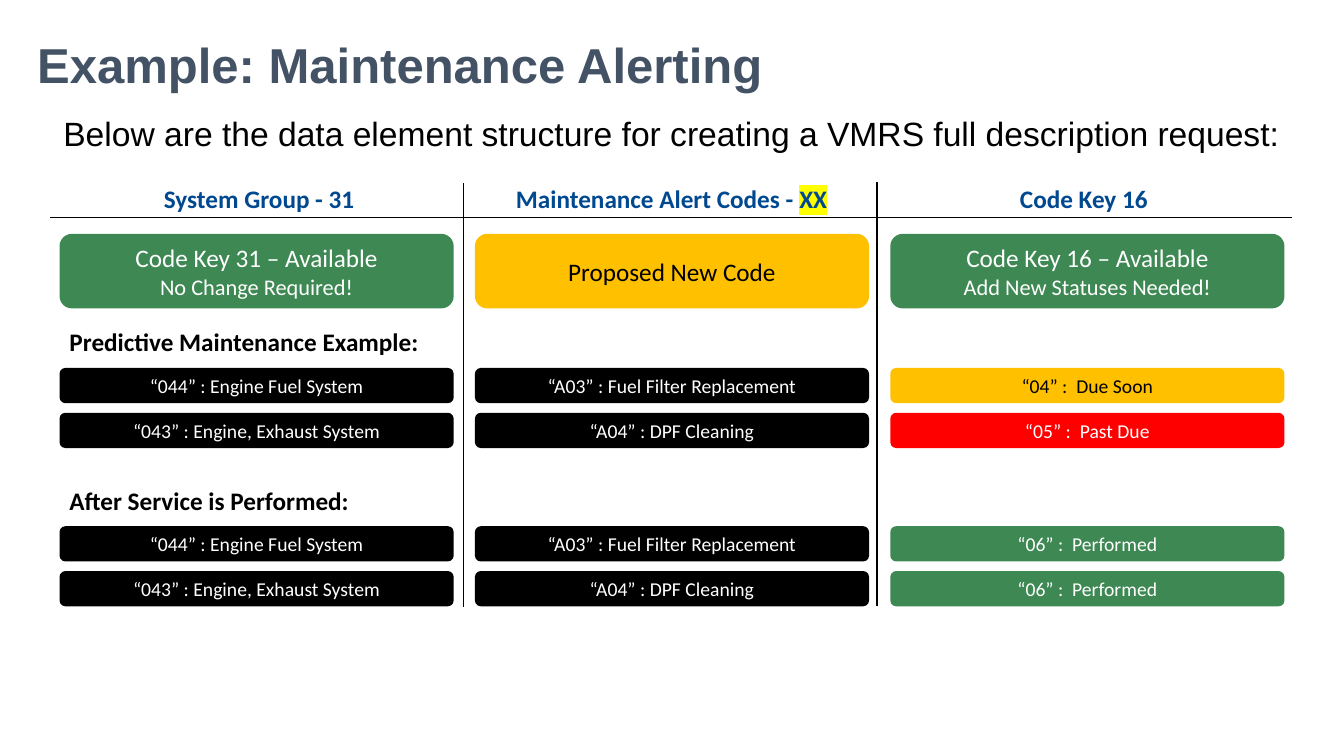
from dataclasses import dataclass
from typing import Any

import lxml.etree
import pptx
import pptx.dml.color
import pptx.enum.shapes
import pptx.enum.text
import pptx.oxml.ns
import pptx.util

COLORS = {
    "title": "435265",
    "header": "004990",
    "black": "000000",
    "white": "FFFFFF",
    "green": "3E8853",
    "amber": "FFC000",
    "red": "FF0000",
    "highlight": "FFFF00",
}

SLIDE_WIDTH, SLIDE_HEIGHT = 13.33, 7.5
GRID_LEFT, COLUMN_PITCH, COLUMN_WIDTH = 0.59, 4.12, 3.91
GRID_WIDTH = 2 * COLUMN_PITCH + COLUMN_WIDTH
HEADER_LEFT, HEADER_PITCH, HEADER_WIDTH = 0.53, 4.09, 4.08
SECTION_TOP, SECTION_PITCH = 3.25, 1.57
FIRST_ROW_OFFSET, ROW_PITCH, ROW_HEIGHT = 0.4, 0.445, 0.35

CENTER = pptx.enum.text.PP_ALIGN.CENTER
LEFT = pptx.enum.text.PP_ALIGN.LEFT
MIDDLE = pptx.enum.text.MSO_ANCHOR.MIDDLE
TOP = pptx.enum.text.MSO_ANCHOR.TOP


@dataclass(frozen=True)
class Box:
    left: float
    top: float
    width: float
    height: float

    def lengths(self) -> list[int]:
        return [pptx.util.Inches(value) for value in (self.left, self.top, self.width, self.height)]


@dataclass(frozen=True)
class Run:
    text: str
    size: float
    color: str
    bold: bool = False
    font: str = "Calibri"
    highlight: str = ""


@dataclass(frozen=True)
class Card:
    lines: tuple[tuple[str, float], ...]
    fill: str
    color: str = "white"


@dataclass(frozen=True)
class Section:
    heading: str
    rows: tuple[tuple[Card, ...], ...]


@dataclass(frozen=True)
class Rule:
    start: tuple[float, float]
    end: tuple[float, float]


def item(text: str, fill: str = "black", color: str = "white") -> Card:
    return Card(((text, 14),), fill, color)


def header(text: str, highlight: str = "") -> Run:
    return Run(text, 18, "header", True, highlight=highlight)


FUEL = (item("“044” : Engine Fuel System"), item("“A03” : Fuel Filter Replacement"))
EXHAUST = (item("“043” : Engine, Exhaust System"), item("“A04” : DPF Cleaning"))
PERFORMED = item("“06” :  Performed", "green")

HEADERS = (
    (header("System Group - 31"),),
    (header("Maintenance Alert Codes - "), header("XX", "highlight")),
    (header("Code Key 16"),),
)
STATUS_CARDS = (
    Card((("Code Key 31 – Available", 18), ("No Change Required!", 16)), "green"),
    Card((("Proposed New Code", 18),), "amber", "black"),
    Card((("Code Key 16 – Available", 18), ("Add New Statuses Needed!", 16)), "green"),
)
SECTIONS = (
    Section("Predictive Maintenance Example:", (
        (*FUEL, item("“04” :  Due Soon", "amber", "black")),
        (*EXHAUST, item("“05” :  Past Due", "red")),
    )),
    Section("After Service is Performed:", (
        (*FUEL, PERFORMED),
        (*EXHAUST, PERFORMED),
    )),
)
RULES = (
    Rule((4.6, 1.82), (4.6, 6.02)),
    Rule((8.7, 1.81), (8.7, 6.01)),
    Rule((0.5, 2.16), (12.81, 2.16)),
)


def rgb(name: str) -> pptx.dml.color.RGBColor:
    return pptx.dml.color.RGBColor.from_string(COLORS[name])


def write_paragraphs(shape: Any, paragraphs: list[tuple[Run, ...]], alignment: Any,
                     anchor: Any, line_spacing: float = 1.0) -> None:
    frame = shape.text_frame
    frame.word_wrap = True
    frame.vertical_anchor = anchor
    for index, runs in enumerate(paragraphs):
        paragraph = frame.add_paragraph() if index else frame.paragraphs[0]
        paragraph.alignment = alignment
        paragraph.line_spacing = line_spacing
        for part in runs:
            run = paragraph.add_run()
            run.text = part.text
            run.font.color.rgb = rgb(part.color)
            if part.highlight:
                fill = run.font._element.find(pptx.oxml.ns.qn("a:solidFill"))
                mark = lxml.etree.Element(pptx.oxml.ns.qn("a:highlight"))
                color = lxml.etree.SubElement(mark, pptx.oxml.ns.qn("a:srgbClr"))
                color.set("val", COLORS[part.highlight])
                fill.addnext(mark)
            values = {"name": part.font, "size": pptx.util.Pt(part.size), "bold": part.bold}
            for attribute, value in values.items():
                setattr(run.font, attribute, value)


def draw_text(shapes: Any, box: Box, runs: tuple[Run, ...], alignment: Any = LEFT,
              anchor: Any = MIDDLE, line_spacing: float = 1.0) -> None:
    shape = shapes.add_textbox(*box.lengths())
    write_paragraphs(shape, [runs], alignment, anchor, line_spacing)


def draw_card(shapes: Any, column: int, top: float, height: float, card: Card) -> None:
    box = Box(GRID_LEFT + column * COLUMN_PITCH, top, COLUMN_WIDTH, height)
    shape = shapes.add_shape(pptx.enum.shapes.MSO_SHAPE.ROUNDED_RECTANGLE, *box.lengths())
    shape.shadow.inherit = False
    shape.fill.solid()
    shape.fill.fore_color.rgb = rgb(card.fill)
    shape.line.fill.background()
    paragraphs = [(Run(text, size, card.color),) for text, size in card.lines]
    write_paragraphs(shape, paragraphs, CENTER, MIDDLE)


def draw_rule(shapes: Any, rule: Rule) -> None:
    ends = [pptx.util.Inches(value) for value in (*rule.start, *rule.end)]
    connector = shapes.add_connector(pptx.enum.shapes.MSO_CONNECTOR.STRAIGHT, *ends)
    connector.line.color.rgb = rgb("black")
    connector.line.width = pptx.util.Pt(1)
    properties = connector._element.spPr
    lxml.etree.SubElement(properties, pptx.oxml.ns.qn("a:effectLst"))


def draw_section(slide: Any, top: float, section: Section) -> None:
    shapes = slide.shapes.add_group_shape().shapes
    for row, cards in enumerate(section.rows):
        row_top = top + FIRST_ROW_OFFSET + row * ROW_PITCH
        for column, card in enumerate(cards):
            draw_card(shapes, column, row_top, ROW_HEIGHT, card)
    draw_text(shapes, Box(GRID_LEFT, top, GRID_WIDTH, 0.28),
              (Run(section.heading, 18, "black", True),))


def main() -> None:
    presentation = pptx.Presentation()
    presentation.slide_width = pptx.util.Inches(SLIDE_WIDTH)
    presentation.slide_height = pptx.util.Inches(SLIDE_HEIGHT)
    slide = presentation.slides.add_slide(presentation.slide_layouts[6])
    shapes = slide.shapes

    draw_text(shapes, Box(0.27, 0.15, 12, 1.05),
              (Run("Example: Maintenance Alerting", 35, "title", True, "Arial"),), line_spacing=0.9)
    introduction = "Below are the data element structure for creating a VMRS full description request:"
    draw_text(shapes, Box(0.53, 1.12, 12.45, 0.5),
              (Run(introduction, 24, "black", font="Arial"),), anchor=TOP, line_spacing=0.9)
    for rule in RULES:
        draw_rule(shapes, rule)
    for column, runs in enumerate(HEADERS):
        box = Box(HEADER_LEFT + column * HEADER_PITCH, 1.77, HEADER_WIDTH, 0.4)
        draw_text(shapes, box, runs, CENTER, TOP)
    for column, card in enumerate(STATUS_CARDS):
        draw_card(shapes, column, 2.32, 0.74, card)
    for index, section in enumerate(SECTIONS):
        draw_section(slide, SECTION_TOP + index * SECTION_PITCH, section)

    presentation.save("out.pptx")


if __name__ == "__main__":
    main()
